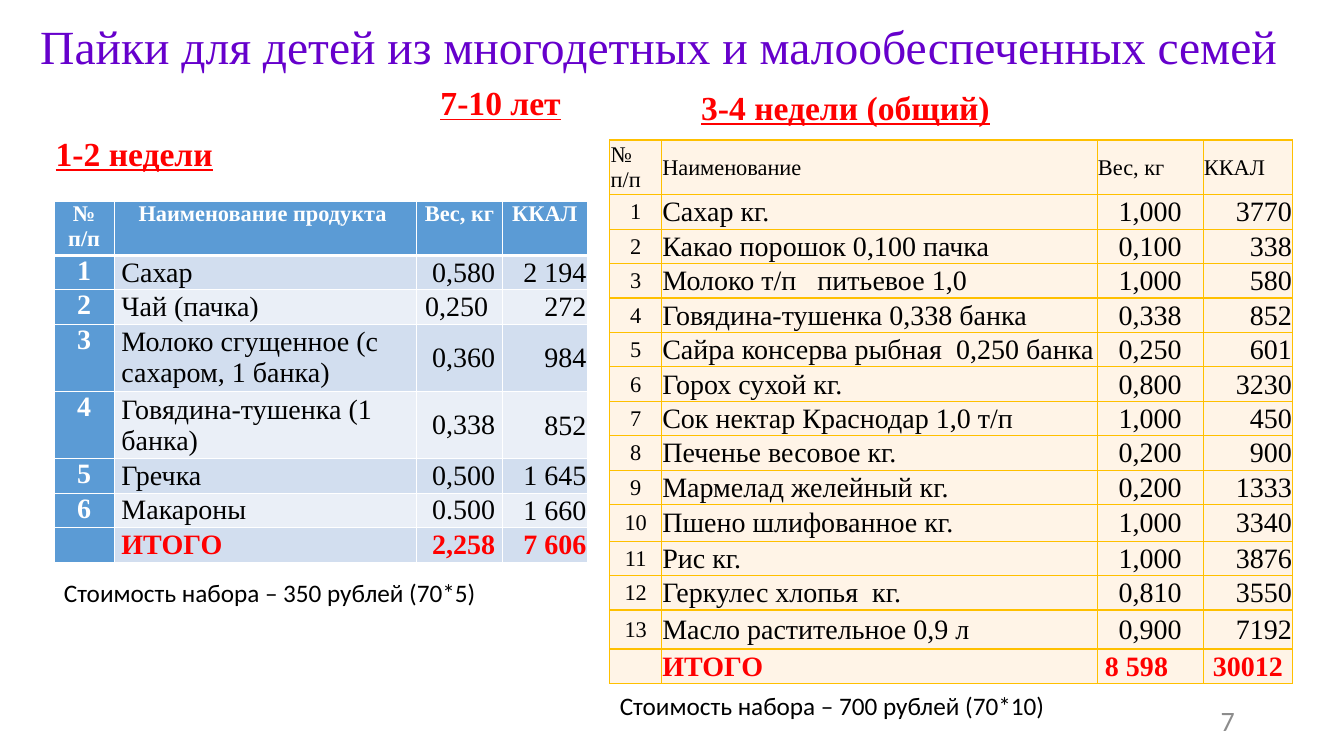
from lxml import etree
from pptx import Presentation
from pptx.dml.color import RGBColor
from pptx.enum.text import MSO_ANCHOR, MSO_AUTO_SIZE, PP_ALIGN
from pptx.oxml.ns import qn
from pptx.util import Cm, Pt

LEFT, CENTER, RIGHT = PP_ALIGN.LEFT, PP_ALIGN.CENTER, PP_ALIGN.RIGHT
TOP, MIDDLE = MSO_ANCHOR.TOP, MSO_ANCHOR.MIDDLE
NO_AUTOFIT = MSO_AUTO_SIZE.NONE
TITLE_ONLY = 5
SERIF, SANS = "Times New Roman", "Calibri"
BLACK, WHITE, RED, VIOLET, GRAY = "000000", "FFFFFF", "FF0000", "6600CC", "8C8C8C"
BLUE, BAND_DARK, BAND_LIGHT = "5B9BD5", "D2DEEF", "EAEFF7"
GOLD, CREAM = "FFC000", "FFF4E7"

WIDE_MARGINS = {"margin_left": Cm(0.18), "margin_right": Cm(0.18),
                "margin_top": 0, "margin_bottom": 0}
NARROW_MARGINS = {"margin_left": Cm(0.02), "margin_right": Cm(0.02),
                  "margin_top": Cm(0.02), "margin_bottom": 0}
HEADING = {"size": 24, "color": RED, "bold": True, "underline": True}

FIRST_WEEKS = [
    ("№ п/п", "Наименование продукта ", "Вес, кг ", "ККАЛ"),
    ("1", "Сахар", "0,580", "2 194"),
    ("2", "Чай (пачка)", "0,250 ", "272"),
    ("3", "Молоко сгущенное (с сахаром, 1 банка)", "0,360", "984"),
    ("4", "Говядина-тушенка (1 банка)", "0,338", "852"),
    ("5", "Гречка", "0,500", "1 645"),
    ("6", "Макароны", "0.500", "1 660"),
    ("", "ИТОГО", "2,258", "7 606"),
]
LAST_WEEKS = [
    ("№ п/п", "Наименование", "Вес, кг", "ККАЛ"),
    ("1", "Сахар кг.", "1,000", "3770"),
    ("2", "Какао порошок 0,100 пачка", "0,100", "338"),
    ("3", "Молоко т/п   питьевое 1,0", "1,000", "580"),
    ("4", "Говядина-тушенка 0,338 банка", "0,338", "852"),
    ("5", "Сайра консерва рыбная  0,250 банка", "0,250", "601"),
    ("6", "Горох сухой кг.", "0,800", "3230"),
    ("7", "Сок нектар Краснодар 1,0 т/п", "1,000", "450"),
    ("8", "Печенье весовое кг.", "0,200", "900"),
    ("9", "Мармелад желейный кг.", "0,200", "1333"),
    ("10", "Пшено шлифованное кг.", "1,000", "3340"),
    ("11", "Рис кг.", "1,000", "3876"),
    ("12", "Геркулес хлопья  кг.", "0,810", "3550"),
    ("13", "Масло растительное 0,9 л", "0,900", "7192"),
    ("", "ИТОГО", " 8 598", "30012"),
]


def rgb(color):
    return RGBColor.from_string(color)


def set_attributes(target, values):
    for name, value in values.items():
        setattr(target, name, value)


def write(frame, text, size, color, font=SERIF, bold=False, underline=False, **layout):
    """Put one formatted run in the frame; layout holds paragraph attributes."""
    paragraph = frame.paragraphs[0]
    set_attributes(paragraph, layout)
    if text:
        run = paragraph.add_run()
        run.text = text
        set_attributes(run.font, {"size": Pt(size), "name": font, "bold": bold,
                                  "underline": underline})
        run.font.color.rgb = rgb(color)


def place(shape, left, top, width, height):
    set_attributes(shape, {"left": Cm(left), "top": Cm(top),
                           "width": Cm(width), "height": Cm(height)})


def add_title(slide, text):
    title = slide.shapes.title
    place(title, 0.76, 0.43, 33.1, 1.63)
    set_attributes(title.text_frame, {"word_wrap": True, "auto_size": NO_AUTOFIT,
                                      "vertical_anchor": MIDDLE})
    write(title.text_frame, text, 34, VIOLET, alignment=LEFT, line_spacing=0.9)


def add_text(slide, text, box, anchor=TOP, **style):
    shape = slide.shapes.add_textbox(*map(Cm, box))
    set_attributes(shape.text_frame, {"word_wrap": True, "vertical_anchor": anchor})
    write(shape.text_frame, text, **style)


def add_heading(slide, text, box):
    add_text(slide, text, box, alignment=RIGHT, line_spacing=0.9,
             space_before=Pt(10), **HEADING)


def add_cost(slide, text, left, top):
    add_text(slide, text, (left, top, 11.94, 1.02), size=18, color=BLACK, font=SANS)


def set_borders(cell, color, widths):
    properties = cell._tc.get_or_add_tcPr()
    for side in "LRTB":
        line = etree.SubElement(properties, qn(f"a:ln{side}"),
                                w=str(Pt(widths.get(side, 1))))
        fill = etree.SubElement(line, qn("a:solidFill"))
        etree.SubElement(fill, qn("a:srgbClr"), val=color)


def first_weeks_style(row, column, last_row):
    """Return fill, border widths, cell attributes and text style."""
    header = row == 0
    widths = {"B": 3} if header else {"T": 3} if row == 1 else {}
    margins = NARROW_MARGINS if column == 3 and not header else WIDE_MARGINS
    if header or column == 0:
        text = {"size": 16 if header else 20, "color": WHITE, "bold": True,
                "alignment": CENTER}
        return BLUE, widths, {**margins, "vertical_anchor": TOP}, text
    total = row == last_row
    text = {"size": 20, "color": RED if total else BLACK, "bold": total,
            "alignment": LEFT if column == 1 else RIGHT}
    band = BAND_DARK if row % 2 else BAND_LIGHT
    return band, widths, {**margins, "vertical_anchor": MIDDLE}, text


def last_weeks_style(row, column, last_row):
    """Return fill, border widths, cell attributes and text style."""
    total = row == last_row
    alignments = (CENTER, LEFT, CENTER, RIGHT)
    if row == 0:
        alignments = (LEFT,) * 4
    elif total:
        alignments = (LEFT, LEFT, LEFT, CENTER)
    text = {"size": 16 if row == 0 or column == 0 else 20,
            "color": RED if total else BLACK, "bold": total,
            "alignment": alignments[column]}
    return CREAM, {}, {**NARROW_MARGINS, "vertical_anchor": MIDDLE}, text


def add_ration_table(slide, rows, left, top, widths, heights, border, style):
    frame = slide.shapes.add_table(len(rows), len(widths), Cm(left), Cm(top),
                                   Cm(sum(widths)), Cm(sum(heights)))
    table = frame.table
    set_attributes(table, {"first_row": False, "horz_banding": False})
    for column, width in zip(table.columns, widths):
        column.width = Cm(width)
    for row, height in zip(table.rows, heights):
        row.height = Cm(height)
    for row, texts in enumerate(rows):
        for column, text in enumerate(texts):
            cell = table.cell(row, column)
            fill, border_widths, attributes, text_style = style(row, column, len(rows) - 1)
            set_borders(cell, border, border_widths)
            cell.fill.solid()
            cell.fill.fore_color.rgb = rgb(fill)
            set_attributes(cell, attributes)
            write(cell.text_frame, text, **text_style)


def main():
    presentation = Presentation()
    set_attributes(presentation, {"slide_width": Cm(33.87), "slide_height": Cm(19.05)})
    slide = presentation.slides.add_slide(presentation.slide_layouts[TITLE_ONLY])

    add_title(slide, "Пайки для детей из многодетных и малообеспеченных семей")
    add_text(slide, "7", (23.75, 17.63, 7.62, 1.02), anchor=MIDDLE, size=20,
             color=GRAY, font=SANS, alignment=RIGHT)
    add_ration_table(slide, FIRST_WEEKS, 1.36, 5.08, (1.52, 7.62, 2.16, 2.14),
                     (1.22, 0.81, 0.81, 1.57, 1.57, 0.81, 0.81, 0.81),
                     WHITE, first_weeks_style)
    add_heading(slide, "7-10 лет", (10.54, 2.06, 3.84, 1.5))
    add_heading(slide, "1-2 недели", (-2.92, 3.33, 8.53, 1.5))
    add_heading(slide, "3-4 недели (общий)", (16.66, 2.18, 8.53, 1.5))
    add_ration_table(slide, LAST_WEEKS, 15.37, 3.53, (1.3, 10.98, 2.67, 2.26),
                     (1.27, 0.85, *[0.81] * 6, 0.83, 0.83, 0.92, 0.84, 0.84, 0.98, 0.81),
                     GOLD, last_weeks_style)
    add_cost(slide, "Стоимость набора – 350 рублей (70*5)", 1.36, 14.43)
    add_cost(slide, "Стоимость набора – 700 рублей (70*10)", 15.37, 17.27)
    presentation.save("out.pptx")


if __name__ == "__main__":
    main()
